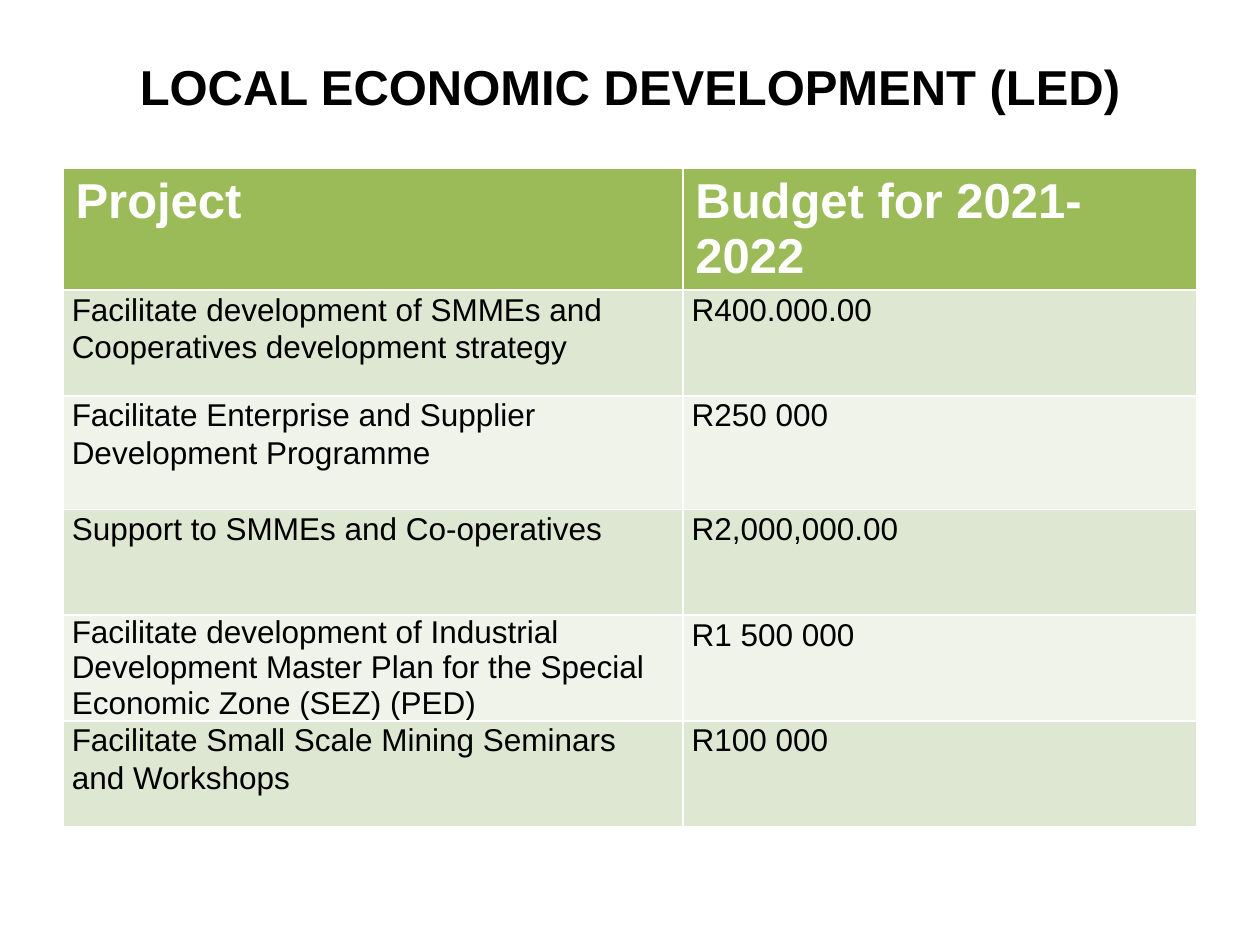
"""Build the Local Economic Development budget slide."""
import pptx
import pptx.dml.color
import pptx.enum.text
import pptx.util

COLORS = {"black": "000000", "white": "FFFFFF", "header": "9BBB59",
          "odd": "DEE7D1", "even": "EFF3EA"}
HEADING = {"name": "Arial", "size": pptx.util.Pt(28), "bold": True}
BODY = {"name": "Arial", "size": pptx.util.Pt(18), "bold": False}
INSETS = {"margin_left": 0.07, "margin_right": 0.07, "margin_top": 0, "margin_bottom": 0}
ROWS = [
    ("Project", "Budget for 2021-2022"),
    ("Facilitate development of SMMEs and Cooperatives development strategy", "R400.000.00"),
    ("Facilitate Enterprise and Supplier Development Programme", "R250 000"),
    ("Support to SMMEs and Co-operatives", "R2,000,000.00"),
    ("Facilitate development of Industrial Development Master Plan for the "
     "Special Economic Zone (SEZ) (PED)", "R1 500 000"),
    ("Facilitate Small Scale Mining Seminars and Workshops", "R100 000"),
]
WIDTHS = [4.92, 4.08]
HEIGHTS = [0.95, 0.84, 0.9, 0.84, 0.84, 0.84]


def rgb(name):
    return pptx.dml.color.RGBColor.from_string(COLORS[name])


def write(p, text, style, color):
    r = p.add_run()
    r.text = text
    for key, value in style.items():
        setattr(r.font, key, value)
    r.font.color.rgb = rgb(color)


prs = pptx.Presentation()
prs.slide_width, prs.slide_height = pptx.util.Inches(10), pptx.util.Inches(7.5)
W, H = prs.slide_width, prs.slide_height
s = prs.slides.add_slide(prs.slide_layouts[5])

title = s.shapes.title
title.left, title.top = int(W * 0.05), int(H * 0.04)
title.width, title.height = int(W * 0.9), int(H * 0.116)
tf = title.text_frame
tf.vertical_anchor = pptx.enum.text.MSO_ANCHOR.MIDDLE
tf.margin_bottom = pptx.util.Inches(0.15)
p = tf.paragraphs[0]
p.alignment = pptx.enum.text.PP_ALIGN.CENTER
write(p, "LOCAL ECONOMIC DEVELOPMENT (LED)", HEADING, "black")

table = s.shapes.add_table(len(ROWS), len(WIDTHS), int(W * 0.05), int(H * 0.178),
                           int(W * 0.9), pptx.util.Inches(sum(HEIGHTS))).table
for column, width in zip(table.columns, WIDTHS):
    column.width = pptx.util.Inches(width)
for row, height in zip(table.rows, HEIGHTS):
    row.height = pptx.util.Inches(height)

for i, texts in enumerate(ROWS):
    fill = "header" if i == 0 else "odd" if i % 2 else "even"
    for j, text in enumerate(texts):
        cell = table.cell(i, j)
        cell.fill.solid()
        cell.fill.fore_color.rgb = rgb(fill)
        p = cell.text_frame.paragraphs[0]
        if i == 0:
            write(p, text, HEADING, "white")
            continue
        for key, value in INSETS.items():
            setattr(cell, key, pptx.util.Inches(value))
        p.line_spacing = 1.0 if (i, j) == (4, 0) else 1.07
        write(p, text, BODY, "black")

prs.save("out.pptx")
